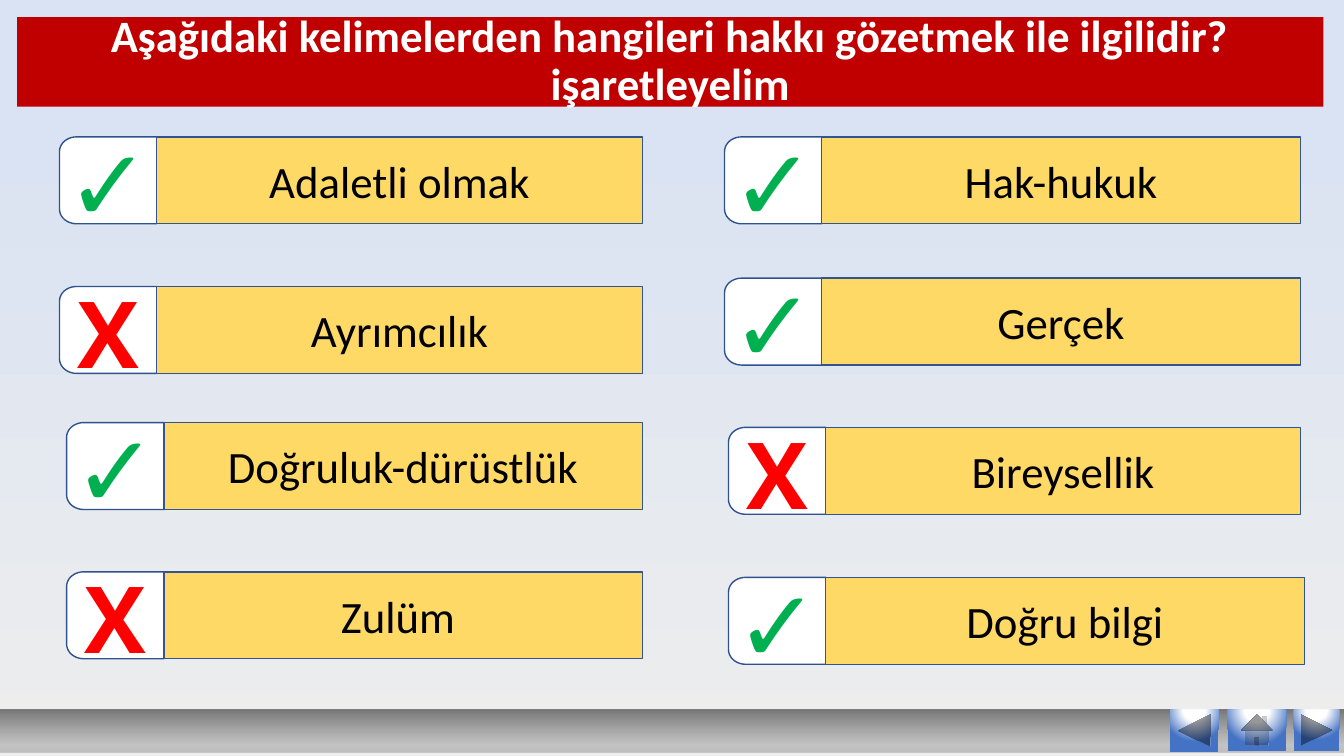
import math

import pptx
import pptx.util
import pptx.dml.color
import pptx.enum.shapes
import pptx.enum.text
import pptx.oxml
import pptx.oxml.ns

Cm = pptx.util.Cm
Pt = pptx.util.Pt
SHAPE = pptx.enum.shapes.MSO_SHAPE

QUESTION = "Aşağıdaki kelimelerden hangileri hakkı gözetmek ile ilgilidir? işaretleyelim"

# word, belongs to the topic, left, top, right edge (cm)
ANSWERS = [
    ("Adaletli olmak", True, 1.5, 3.45, 16.19),
    ("Ayrımcılık", False, 1.5, 7.22, 16.19),
    ("Doğruluk-dürüstlük", True, 1.68, 10.65, 16.19),
    ("Zulüm ", False, 1.68, 14.41, 16.19),
    ("Hak-hukuk", True, 18.26, 3.45, 32.77),
    ("Bireysellik", False, 18.36, 10.77, 32.77),
    ("Gerçek", True, 18.26, 7.01, 32.77),
    ("Doğru bilgi", True, 18.36, 14.55, 32.87),
]

# preset, left, width, height (cm)
BUTTONS = [
    (SHAPE.ACTION_BUTTON_BACK_OR_PREVIOUS, 29.49, 1.22, 1.07),
    (SHAPE.ACTION_BUTTON_FORWARD_OR_NEXT, 32.61, 1.14, 1.04),
    (SHAPE.ACTION_BUTTON_HOME, 30.94, 1.47, 1.04),
]

UPWARD = '<a:lin ang="16200000" scaled="0"/>'
FROM_ABOVE = ('<a:path path="circle"><a:fillToRect l="50000" t="-80000" '
              'r="50000" b="180000"/></a:path>')

THEME = {
    "font": "Calibri", "text_size": 32,
    "banner": "C00000", "banner_text": "FFFFFF",
    "word_fill": "FFD966", "word_line": "325491", "word_text": "000000",
    "tab_fill": "FFFFFF", "tab_line": "2F528F",
    # stops: position %, colour, opacity %
    "background": ([(0, "EDEDED", 100), (84, "DAE3F3", 100)], UPWARD),
    "bar": ([(0, "C0C0C0", 100), (17, "B3B3B3", 70), (100, "777777", 100)], UPWARD),
    "button": ([(0, "FFFFFF", 100), (35, "FFFFFF", 100), (100, "4472C4", 100)], FROM_ABOVE),
}

# offset from the tab, size (cm)
MARKS = {
    True: dict(sign="✓", font="TeX Gyre Bonum", size=72, color="00B050",
               dx=-0.58, dy=-0.53, width=3.63, height=3.33, wrap=True),
    False: dict(sign="X", font="Open Sans", size=66, color="FF0000",
                dx=0.18, dy=-0.39, width=2.08, height=3.07, wrap=False),
}

SLIDE_W, SLIDE_H = 33.87, 19.05
TAB_W, ROW_H = 2.45, 2.19
CORNER_X, CORNER_Y = 0.43, 0.37
BAR_TOP, BAR_H = 17.88, 1.07


def rgb(color):
    return pptx.dml.color.RGBColor.from_string(color)


def paint_gradient(fill, properties, gradient):
    """Fill with a gradient of several stops, placed in the given properties element."""
    stops, direction = gradient
    stop_xml = "".join(
        f'<a:gs pos="{position * 1000}"><a:srgbClr val="{color}">'
        f'<a:alpha val="{opacity * 1000}"/></a:srgbClr></a:gs>'
        for position, color, opacity in stops)
    fill.solid()
    solid = properties.find(pptx.oxml.ns.qn("a:solidFill"))
    properties.replace(solid, pptx.oxml.parse_xml(
        f'<a:gradFill rotWithShape="1" {pptx.oxml.ns.nsdecls("a")}>'
        f'<a:gsLst>{stop_xml}</a:gsLst>{direction}</a:gradFill>'))


def style(shape, fill=None, line=None):
    shape.shadow.inherit = False
    if fill:
        shape.fill.solid()
        shape.fill.fore_color.rgb = rgb(fill)
    if line:
        shape.line.color.rgb = rgb(line)
        shape.line.width = Pt(1)
    else:
        shape.line.fill.background()


def write(shape, text, color, font=THEME["font"], size=THEME["text_size"], bold=False):
    """Set one centred paragraph and return it."""
    shape.text_frame.text = text
    paragraph = shape.text_frame.paragraphs[0]
    paragraph.alignment = pptx.enum.text.PP_ALIGN.CENTER
    run_font = paragraph.runs[0].font
    run_font.name, run_font.size, run_font.bold = font, Pt(size), bold
    run_font.color.rgb = rgb(color)
    return paragraph


def add_box(shapes, preset, left, top, width, height):
    return shapes.add_shape(preset, Cm(left), Cm(top), Cm(width), Cm(height))


def add_tab(shapes, left, top):
    """Draw the answer's tab, rounded at its two left corners."""
    right, bottom = left + TAB_W, top + ROW_H

    def corner(center_y, first_angle):
        angles = [math.radians(first_angle + 9 * step) for step in range(11)]
        return [(left + CORNER_X + CORNER_X * math.cos(angle),
                 center_y + CORNER_Y * math.sin(angle)) for angle in angles]

    outline = ([(right, top), (right, bottom)]
               + corner(bottom - CORNER_Y, 90) + corner(top + CORNER_Y, 180))
    points = [(Cm(x), Cm(y)) for x, y in outline]
    builder = shapes.build_freeform(*points[0], scale=1.0)
    builder.add_line_segments(points[1:], close=True)
    style(builder.convert_to_shape(), THEME["tab_fill"], THEME["tab_line"])


def add_answer(slide, word, fits, left, top, right):
    row = slide.shapes.add_group_shape().shapes
    add_tab(row, left, top)
    word_left = left + TAB_W
    word_box = add_box(row, SHAPE.RECTANGLE, word_left, top, right - word_left, ROW_H)
    style(word_box, THEME["word_fill"], THEME["word_line"])
    word_box.text_frame.vertical_anchor = pptx.enum.text.MSO_ANCHOR.MIDDLE
    write(word_box, word, THEME["word_text"])

    mark = MARKS[fits]
    mark_box = slide.shapes.add_textbox(Cm(left + mark["dx"]), Cm(top + mark["dy"]),
                                        Cm(mark["width"]), Cm(mark["height"]))
    mark_box.text_frame.word_wrap = mark["wrap"]
    mark_box.text_frame.auto_size = pptx.enum.text.MSO_AUTO_SIZE.SHAPE_TO_FIT_TEXT
    write(mark_box, mark["sign"], mark["color"], mark["font"], mark["size"], bold=True)


def add_banner(slide):
    banner = add_box(slide.shapes, SHAPE.RECTANGLE, 0.43, 0.43, 32.92, 2.26)
    style(banner, THEME["banner"])
    banner.text_frame.word_wrap = True
    banner.text_frame.vertical_anchor = pptx.enum.text.MSO_ANCHOR.MIDDLE
    write(banner, QUESTION, THEME["banner_text"], bold=True).line_spacing = 0.9


def add_navigation(slide):
    parts = [(SHAPE.RECTANGLE, 0, SLIDE_W, BAR_H, "bar")]
    parts += [(*button, "button") for button in BUTTONS]
    for preset, left, width, height, look in parts:
        part = add_box(slide.shapes, preset, left, BAR_TOP, width, height)
        style(part)
        paint_gradient(part.fill, part.element.spPr, THEME[look])


def main():
    deck = pptx.Presentation()
    deck.slide_width, deck.slide_height = Cm(SLIDE_W), Cm(SLIDE_H)
    slide = deck.slides.add_slide(deck.slide_layouts[6])
    background = slide.background.fill
    background.solid()
    paint_gradient(background, next(slide.element.iter(pptx.oxml.ns.qn("p:bgPr"))),
                   THEME["background"])
    add_banner(slide)
    for answer in ANSWERS:
        add_answer(slide, *answer)
    add_navigation(slide)
    deck.save("out.pptx")


if __name__ == "__main__":
    main()
